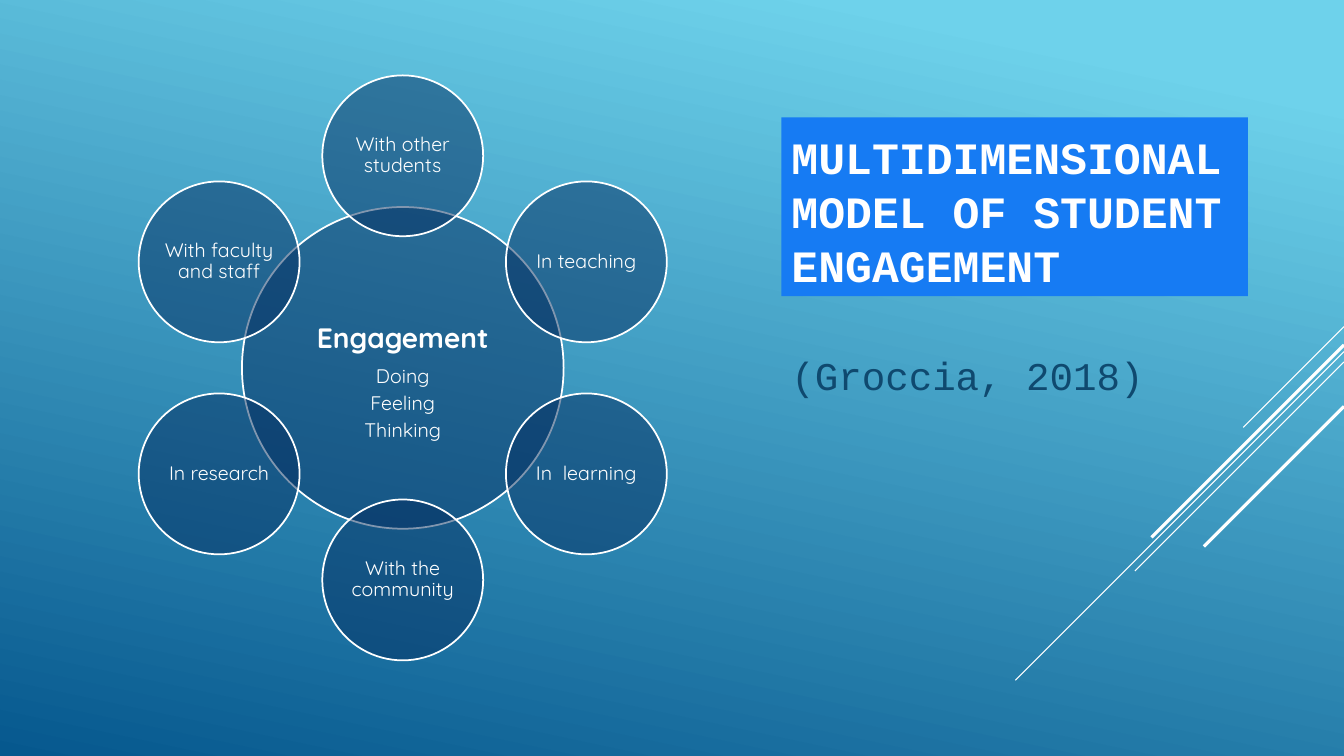
import math
from dataclasses import dataclass

import lxml.etree
import pptx
import pptx.dml.color
import pptx.enum.shapes
import pptx.enum.text
import pptx.oxml.ns
import pptx.util

Cm = pptx.util.Cm
Pt = pptx.util.Pt
RGB = pptx.dml.color.RGBColor
ANCHOR = pptx.enum.text.MSO_ANCHOR
ALIGN = pptx.enum.text.PP_ALIGN
qn = pptx.oxml.ns.qn


@dataclass(frozen=True)
class Theme:
    sky: RGB = RGB(0x6E, 0xD2, 0xEB)
    deep: RGB = RGB(0x06, 0x58, 0x8E)
    white: RGB = RGB(0xFF, 0xFF, 0xFF)
    navy: RGB = RGB(0x05, 0x2F, 0x61)
    panel: RGB = RGB(0x16, 0x7B, 0xF3)
    citation: RGB = RGB(0x0F, 0x49, 0x6F)
    heading_font: str = "Courier New"
    diagram_font: str = "Quicksand"
    title_size: int = 32
    citation_size: int = 28
    hub_size: int = 20
    label_size: int = 14


@dataclass(frozen=True)
class Box:
    """A region of the slide, in centimetres."""
    left: float
    top: float
    width: float
    height: float

    def lengths(self):
        return Cm(self.left), Cm(self.top), Cm(self.width), Cm(self.height)


THEME = Theme()
SLIDE = Box(0, 0, 33.87, 19.05)
DIMENSIONS = ["With other students", "In teaching", "In  learning",
              "With the community", "In research", "With faculty and staff"]
# Start height on the right edge, horizontal run, line width
STRIPES = [(8.23, 2.54, 0.75), (8.86, 8.28, 0.75), (9.12, 5.27, 0.75),
           (8.69, 4.85, 2.25), (10.24, 3.53, 2.25)]


def style_font(para, name, size, color, bold=False):
    font = para.font
    font.name, font.size, font.bold = name, Pt(size), bold
    font.color.rgb = color


def paint_background(page):
    fill = page.background.fill
    fill.gradient()
    fill.gradient_angle = 258
    for stop, color, position in zip(fill.gradient_stops,
                                     (THEME.sky, THEME.deep), (0.1, 1)):
        stop.color.rgb = color
        stop.position = position


def add_stripes(page, box):
    """Draw the 45-degree lines running down from the right edge of the box."""
    right = box.left + box.width
    for start, run, width in STRIPES:
        top = box.top + start
        stripe = page.shapes.add_connector(
            pptx.enum.shapes.MSO_CONNECTOR.STRAIGHT,
            Cm(right), Cm(top), Cm(right - run), Cm(top + run))
        stripe.line.color.rgb = THEME.white
        stripe.line.width = Pt(width)
        properties = stripe.line._get_or_add_ln().getparent()
        lxml.etree.SubElement(properties, qn("a:effectLst"))


def fill_placeholder(holder, box, text, anchor):
    """Move a placeholder to the box and return its only paragraph."""
    holder.left, holder.top, holder.width, holder.height = box.lengths()
    frame = holder.text_frame
    frame.text = text
    frame.auto_size = pptx.enum.text.MSO_AUTO_SIZE.NONE
    frame.vertical_anchor = anchor
    para = frame.paragraphs[0]
    para.alignment = ALIGN.LEFT
    return para


def add_heading(page, box):
    title, body = page.shapes.title, page.placeholders[1]
    para = fill_placeholder(
        title, Box(box.left, box.top, box.width, 4.5),
        "MULTIDIMENSIONAL MODEL OF STUDENT ENGAGEMENT", ANCHOR.BOTTOM)
    style_font(para, THEME.heading_font, THEME.title_size, THEME.white, True)
    title.fill.solid()
    title.fill.fore_color.rgb = THEME.panel

    para = fill_placeholder(
        body, Box(box.left, box.top + 5.77, 10.16, box.height - 5.77),
        "(Groccia, 2018)", ANCHOR.TOP)
    style_font(para, THEME.heading_font, THEME.citation_size, THEME.citation)
    para.space_before, para.space_after = Pt(5.6), Pt(6)


def add_circle(page, center_x, center_y, diameter, lines, top_inset=0.05):
    """Add a translucent circle; lines holds (text, size, bold, space after)."""
    box = Box(center_x - diameter / 2, center_y - diameter / 2,
              diameter, diameter)
    circle = page.shapes.add_shape(
        pptx.enum.shapes.MSO_SHAPE.OVAL, *box.lengths())
    circle.shadow.inherit = False
    circle.fill.solid()
    circle.fill.fore_color.rgb = THEME.navy
    color = circle.fill._xPr.find(qn("a:solidFill"))[0]
    lxml.etree.SubElement(color, qn("a:alpha"), val="50000")
    circle.line.color.rgb = THEME.white
    circle.line.width = Pt(1.25)

    frame = circle.text_frame
    frame.word_wrap = True
    frame.vertical_anchor = ANCHOR.MIDDLE
    frame.margin_left = frame.margin_right = frame.margin_bottom = Cm(0.05)
    frame.margin_top = Cm(top_inset)
    frame.text = "\n".join(line[0] for line in lines)
    for para, (_, size, bold, after) in zip(frame.paragraphs, lines):
        style_font(para, THEME.diagram_font, size, THEME.white, bold)
        para.alignment = ALIGN.CENTER
        para.line_spacing = 0.9
        para.space_after = Pt(after)


def add_engagement_wheel(page, box):
    """Ring the engagement hub with one circle for each dimension."""
    center_x = box.left + box.width / 2
    center_y = box.top + box.height / 2
    satellite = box.height * 0.275
    radius = (box.height - satellite) / 2

    hub = [("Engagement", THEME.hub_size, True, 8.4)]
    hub += [(text, THEME.label_size, False, 4.2)
            for text in ("Doing", "Feeling", "Thinking")]
    add_circle(page, center_x, center_y, satellite * 2, hub, top_inset=0.8)

    for index, label in enumerate(DIMENSIONS):
        angle = math.tau * index / len(DIMENSIONS)
        add_circle(page, center_x + radius * math.sin(angle),
                   center_y - radius * math.cos(angle), satellite,
                   [(label, THEME.label_size, False, 4.2)])


def main():
    deck = pptx.Presentation()
    deck.slide_width, deck.slide_height = Cm(SLIDE.width), Cm(SLIDE.height)
    page = deck.slides.add_slide(deck.slide_layouts.get_by_name("Section Header"))
    paint_background(page)
    add_stripes(page, SLIDE)
    add_heading(page, Box(19.69, 2.96, 11.76, 11.59))
    add_engagement_wheel(page, Box(3.48, 1.9, 13.34, 14.74))
    deck.save("out.pptx")


if __name__ == "__main__":
    main()
